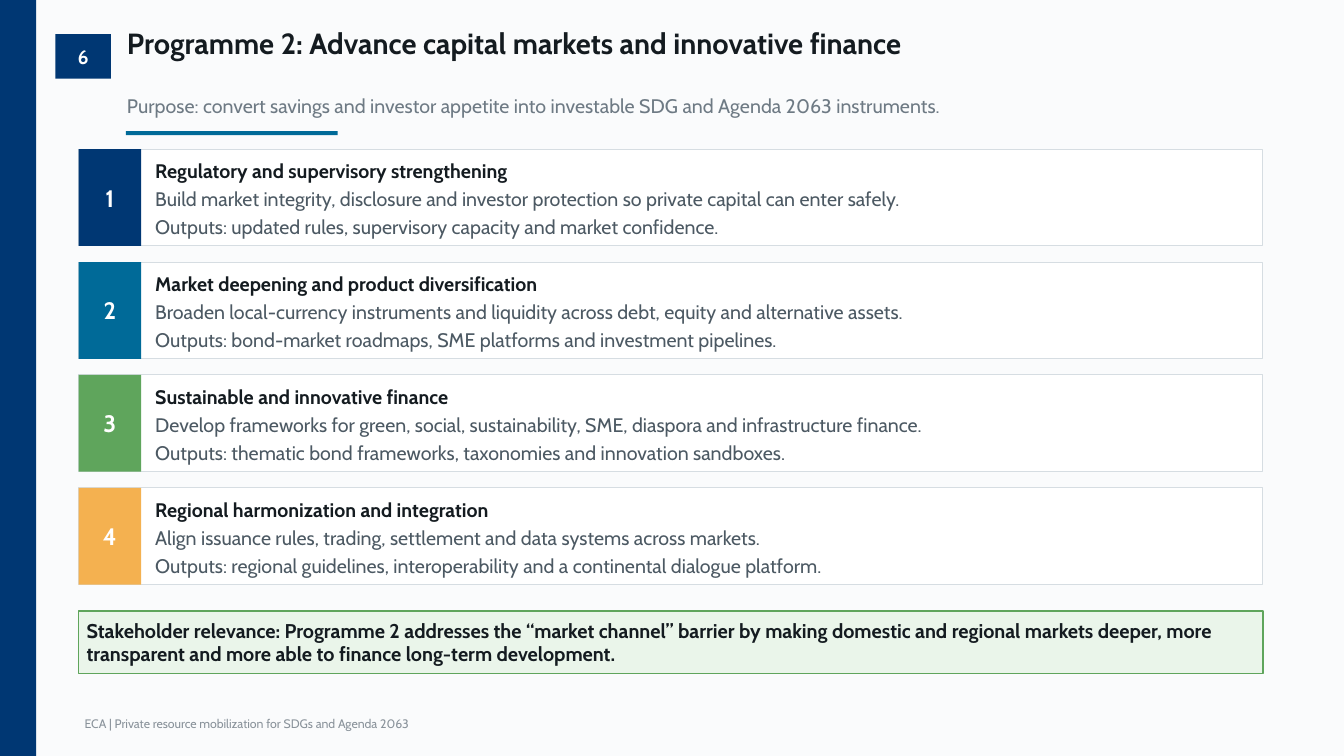
"""Build the slide on Programme 2, capital markets and innovative finance."""
from pptx import Presentation
from pptx import util as u
from pptx.dml.color import RGBColor
from pptx.enum import shapes, text

FONT = "Cabin"
NAVY, TEAL, GREEN, AMBER = "003773", "006A98", "5FA55C", "F4B150"
INK, BODY, WHITE = "141B20", "4C5963", "FFFFFF"

TITLE = "Programme 2: Advance capital markets and innovative finance"
PURPOSE = "Purpose: convert savings and investor appetite into investable SDG and Agenda 2063 instruments."
STRANDS = [
    (NAVY, "Regulatory and supervisory strengthening",
     "Build market integrity, disclosure and investor protection so private capital can enter safely.",
     "Outputs: updated rules, supervisory capacity and market confidence."),
    (TEAL, "Market deepening and product diversification",
     "Broaden local-currency instruments and liquidity across debt, equity and alternative assets.",
     "Outputs: bond-market roadmaps, SME platforms and investment pipelines."),
    (GREEN, "Sustainable and innovative finance",
     "Develop frameworks for green, social, sustainability, SME, diaspora and infrastructure finance.",
     "Outputs: thematic bond frameworks, taxonomies and innovation sandboxes."),
    (AMBER, "Regional harmonization and integration",
     "Align issuance rules, trading, settlement and data systems across markets.",
     "Outputs: regional guidelines, interoperability and a continental dialogue platform."),
]
RELEVANCE = ("Stakeholder relevance: Programme 2 addresses the “market channel” barrier by making domestic "
             "and regional markets deeper, more transparent and more able to finance long-term development.")
FOOTER = "ECA | Private resource mobilization for SDGs and Agenda 2063"

WIDTH, HEIGHT = 960, 540
LEFT, CARD_WIDTH = 56.16, 846
CARD_TOP, CARD_HEIGHT, CARD_STEP = 106.56, 69.12, 80.64
TAB_WIDTH = 44.64
HEAD_LEFT = 90

deck = Presentation()
deck.slide_width, deck.slide_height = u.Pt(WIDTH), u.Pt(HEIGHT)
page = deck.slides.add_slide(deck.slide_layouts[6])


def colour(value):
    return RGBColor.from_string(value)


def add_block(left, top, width, height, fill, line=None, weight=0.75):
    block = page.shapes.add_shape(shapes.MSO_SHAPE.RECTANGLE, *map(u.Pt, (left, top, width, height)))
    block.shadow.inherit = False
    block.fill.solid()
    block.fill.fore_color.rgb = colour(fill)
    if line:
        block.line.color.rgb = colour(line)
        block.line.width = u.Pt(weight)
    else:
        block.line.fill.background()
    return block


def add_box(left, top, width, height):
    return page.shapes.add_textbox(*map(u.Pt, (left, top, width, height)))


def write(box, *lines, size=14, ink=INK, bold=False, inset=0.72, centre=False,
          middle=False, after=None, body_ink=None):
    frame = box.text_frame
    frame.word_wrap = True
    frame.margin_left = frame.margin_top = frame.margin_right = frame.margin_bottom = u.Pt(inset)
    frame.vertical_anchor = text.MSO_ANCHOR.MIDDLE if middle else text.MSO_ANCHOR.TOP
    for index, line in enumerate(lines):
        para = frame.add_paragraph() if index else frame.paragraphs[0]
        para.alignment = text.PP_ALIGN.CENTER if centre else text.PP_ALIGN.LEFT
        if after is not None:
            para.space_after = u.Pt(after)
        span = para.add_run()
        span.text = line
        span.font.name, span.font.size = FONT, u.Pt(size)
        span.font.bold = bold and not (index and body_ink)
        span.font.color.rgb = colour(body_ink if index and body_ink else ink)


add_block(0, 0, WIDTH, HEIGHT, "FAFBFC")
add_block(0, 0, 25.92, HEIGHT, NAVY)
write(add_block(39.6, 24.48, 39.6, 31.68, NAVY), "6",
      ink=WHITE, bold=True, inset=4.32, centre=True, middle=True)
write(add_box(HEAD_LEFT, 17.28, 838.8, 44.64), TITLE, size=20.8, bold=True)
write(add_box(HEAD_LEFT, 66.24, 824.4, 25.2), PURPOSE, ink="6E7A84")
add_block(HEAD_LEFT, 93.6, 151.2, 2.88, TEAL)

for number, (accent, *lines) in enumerate(STRANDS, 1):
    top = CARD_TOP + (number - 1) * CARD_STEP
    add_block(LEFT, top, CARD_WIDTH, CARD_HEIGHT, WHITE, line="D6DDE2")
    write(add_block(LEFT, top, TAB_WIDTH, CARD_HEIGHT, accent), str(number),
          size=17, ink=WHITE, bold=True, inset=5.76, centre=True, middle=True)
    write(add_box(109.44, top + 5.76, 785.52, 60.48), *lines,
          bold=True, inset=1.44, after=3, body_ink=BODY)

write(add_block(LEFT, 436.32, CARD_WIDTH, 44.64, "EAF5EA", line=GREEN, weight=1), RELEVANCE,
      size=14.2, bold=True, inset=5.76, middle=True)
write(add_box(LEFT, 507.6, 576, 18), FOOTER, size=8.8, ink="8A939B", inset=4.32)

deck.save("out.pptx")
